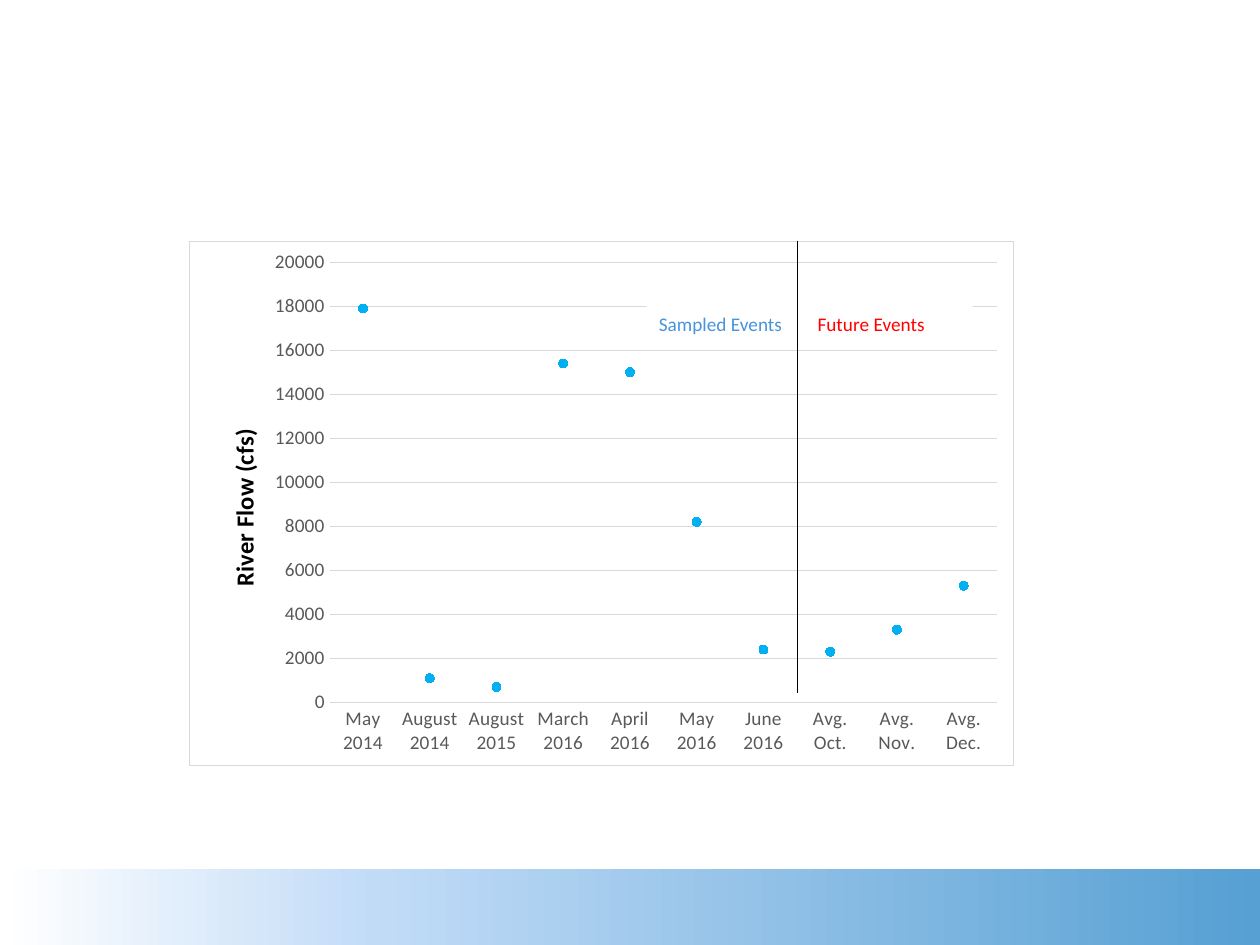
"""Build a slide with a river flow chart split into sampled and future events."""
from lxml import etree
from pptx import Presentation
from pptx.chart.data import CategoryChartData
from pptx.dml.color import RGBColor
from pptx.enum.chart import XL_CHART_TYPE, XL_MARKER_STYLE, XL_TICK_MARK
from pptx.enum.shapes import MSO_CONNECTOR, MSO_SHAPE
from pptx.enum.text import MSO_ANCHOR, PP_ALIGN
from pptx.oxml import parse_xml
from pptx.oxml.ns import nsdecls, qn
from pptx.util import Inches, Pt

STACKED_MARKERS = XL_CHART_TYPE.LINE_MARKERS_STACKED
CIRCLE = XL_MARKER_STYLE.CIRCLE
NO_TICKS = XL_TICK_MARK.NONE
STRAIGHT = MSO_CONNECTOR.STRAIGHT
RECTANGLE = MSO_SHAPE.RECTANGLE
TOP = MSO_ANCHOR.TOP
LEFT = PP_ALIGN.LEFT
FONT = "Calibri"
GREY = "D9D9D9"


def color(value):
    return RGBColor.from_string(value)


def set_layout(parent, index, **fractions):
    for layout in parent.findall(qn("c:layout")):
        parent.remove(layout)
    layout = etree.Element(qn("c:layout"))
    manual = etree.SubElement(layout, qn("c:manualLayout"))
    if "w" in fractions:
        etree.SubElement(manual, qn("c:layoutTarget"), val="inner")
    for mode in ("xMode", "yMode"):
        etree.SubElement(manual, qn(f"c:{mode}"), val="edge")
    for name, value in fractions.items():
        etree.SubElement(manual, qn(f"c:{name}"), val=str(value))
    parent.insert(index, layout)


presentation = Presentation()
presentation.slide_width = Inches(10)
presentation.slide_height = Inches(7.5)
slide = presentation.slides.add_slide(presentation.slide_layouts[6])

footer = slide.shapes.add_shape(RECTANGLE, 0, Inches(6.9), Inches(10), Inches(0.6))
footer.shadow.inherit = False
footer.line.fill.background()
footer.fill.gradient()
footer.fill.gradient_angle = 0
stop_list = footer._element.spPr.find(".//" + qn("a:gsLst"))
for stop in list(stop_list):
    stop_list.remove(stop)
for percent, value in ((0, "FFFFFF"), (30, "C1DBF7"), (100, "56A0D3")):
    stop = etree.SubElement(stop_list, qn("a:gs"), pos=str(percent * 1000))
    etree.SubElement(stop, qn("a:srgbClr"), val=value)

flows = {
    "May 2014": 17900, "August 2014": 1100, "August 2015": 700,
    "March 2016": 15400, "April 2016": 15000, "May 2016": 8200,
    "June 2016": 2400, "Avg. Oct.": 2300, "Avg. Nov.": 3300, "Avg. Dec.": 5300,
}
chart_data = CategoryChartData(number_format="0")
chart_data.categories = list(flows)
chart_data.add_series("Series 1", list(flows.values()))
chart = slide.shapes.add_chart(
    STACKED_MARKERS, Inches(1.5), Inches(1.91), Inches(6.55), Inches(4.17), chart_data
).chart
chart.has_legend = False
chart.has_title = False
chart.font.name = FONT
chart.font.size = Pt(10)
chart.font.color.rgb = color("000000")
chart_space = chart._chartSpace
chart_space.find(qn("c:chart")).addnext(parse_xml(
    f'<c:spPr {nsdecls("c", "a")}>'
    '<a:solidFill><a:srgbClr val="FFFFFF"/></a:solidFill>'
    f'<a:ln w="9525"><a:solidFill><a:srgbClr val="{GREY}"/></a:solidFill></a:ln>'
    "</c:spPr>"
))
set_layout(chart_space.find(".//" + qn("c:plotArea")), 0, x=0.17, y=0.04, w=0.81, h=0.84)

chart.plots[0].vary_by_categories = False
series = chart.plots[0].series[0]
series.smooth = False
series.format.line.fill.background()
series.marker.style = CIRCLE
series.marker.size = 5
series.marker.format.fill.solid()
series.marker.format.fill.fore_color.rgb = color("00B0F0")
series.marker.format.line.color.rgb = color("00B0F0")

category_axis, value_axis = chart.category_axis, chart.value_axis
for axis in (category_axis, value_axis):
    axis.major_tick_mark = NO_TICKS
    axis.minor_tick_mark = NO_TICKS
    axis.tick_labels.font.name = FONT
    axis.tick_labels.font.size = Pt(11)
    axis.tick_labels.font.color.rgb = color("595959")
value_axis.format.line.fill.background()
value_axis.minimum_scale = 0
value_axis.maximum_scale = 20000
value_axis.major_unit = 2000
value_axis.tick_labels.number_format = "0"
value_axis.tick_labels.number_format_is_linked = False
for line in (category_axis.format.line, value_axis.major_gridlines.format.line):
    line.color.rgb = color(GREY)
    line.width = Pt(0.75)

axis_title = value_axis.axis_title
axis_title.text_frame.text = "River Flow (cfs)"
title_font = axis_title.text_frame.paragraphs[0].font
title_font.name = FONT
title_font.size = Pt(14)
title_font.bold = True
title_font.color.rgb = color("000000")
set_layout(axis_title._element, 1, x=0.04, y=0.35)

label = slide.shapes.add_shape(
    RECTANGLE, Inches(5.13), Inches(2.43), Inches(2.59), Inches(0.21)
)
label.shadow.inherit = False
label.fill.solid()
label.fill.fore_color.rgb = color("FFFFFF")
label.line.fill.background()
label.text_frame.word_wrap = True
label.text_frame.vertical_anchor = TOP
paragraph = label.text_frame.paragraphs[0]
paragraph.alignment = LEFT
tabs = etree.SubElement(paragraph._p.get_or_add_pPr(), qn("a:tabLst"))
etree.SubElement(tabs, qn("a:tab"), pos=str(Inches(1.26)), algn="l")
paragraph.font.name = FONT
paragraph.font.size = Pt(11)
for text, value in (("Sampled Events\t", "4793DD"), ("Future Events", "FF0000")):
    run = paragraph.add_run()
    run.text = text
    run.font.color.rgb = color(value)

divider = slide.shapes.add_connector(
    STRAIGHT, Inches(6.33), Inches(1.91), Inches(6.33), Inches(5.5)
)
divider.line.color.rgb = color("000000")
divider.line.width = Pt(0.75)
etree.SubElement(divider._element.spPr, qn("a:effectLst"))

presentation.save("out.pptx")
